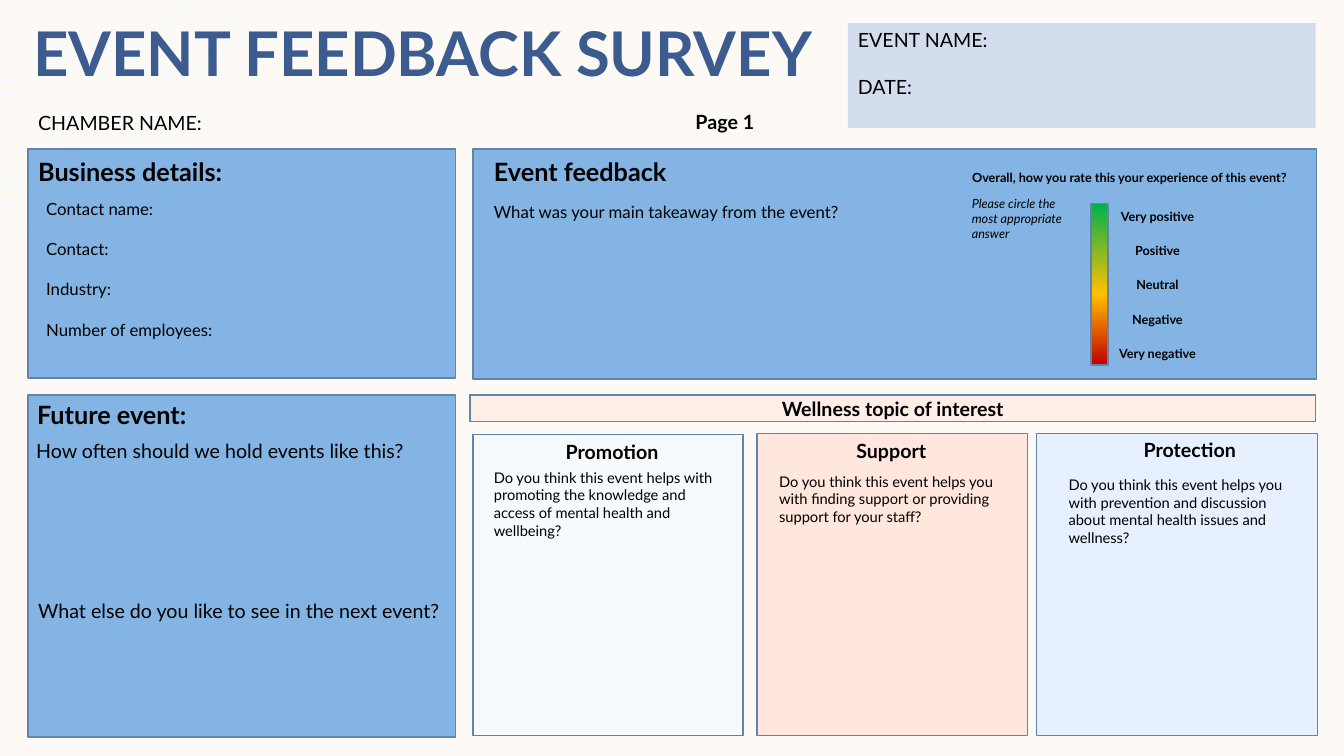
from copy import deepcopy
from math import asin, cos, pi, sin, tan

from lxml.etree import SubElement
from pptx import Presentation
from pptx.dml.color import RGBColor
from pptx.enum.shapes import MSO_SHAPE
from pptx.enum.text import MSO_ANCHOR, PP_ALIGN
from pptx.oxml.ns import qn
from pptx.util import Inches, Pt

PX = 9144
FONT = "Lato"
COLORS = {
    "paper": "FDFAF6",
    "ring": "F6FAFD",
    "title": "3C5C8F",
    "ink": "000000",
    "panel": "83B4E3",
    "outline": "6185A8",
    "event": "D4DDED",
    "banner": "FFEEE7",
    "promotion": "F6FAFD",
    "support": "FFE7DD",
    "protection": "E6F0FE",
    "good": "00B050",
    "neutral": "FFC000",
    "bad": "C00000",
}
RATINGS = ["Very positive", "Positive", "Neutral", "Negative", "Very negative"]
TOPICS = [
    ("Promotion", "promotion", (469, 431, 268, 299), (463, 432), (480, 460),
     "Do you think this event helps with promoting the knowledge and access "
     "of mental health and wellbeing?"),
    ("Support", "support", (751, 430, 268, 300), (740, 431), (763, 464),
     "Do you think this event helps you with finding support or providing "
     "support for your staff?"),
    ("Protection", "protection", (1028, 430, 279, 300), (1036, 430), (1050, 467),
     "Do you think this event helps you with prevention and discussion about "
     "mental health issues and wellness?"),
]


def rgb(name):
    return RGBColor.from_string(COLORS[name])


def emu(*lengths):
    return [round(length * PX) for length in lengths]


def write(frame, lines, size, color="ink", bold=False, italic=False,
          align=PP_ALIGN.LEFT, gap=0):
    frame.word_wrap = True
    for index, line in enumerate(lines):
        para = frame.paragraphs[0] if index == 0 else frame.add_paragraph()
        para.text = line
        para.alignment = align
        para.space_before = Pt(gap if index else 0)
        para.font.name = FONT
        para.font.size = Pt(size)
        para.font.bold = bold
        para.font.italic = italic
        para.font.color.rgb = rgb(color)


def add_text(page, place, lines, size, **style):
    box = page.shapes.add_textbox(*emu(*place))
    write(box.text_frame, lines, size, **style)


def add_panel(page, place, color, outlined=True):
    panel = page.shapes.add_shape(MSO_SHAPE.RECTANGLE, *emu(*place))
    panel.shadow.inherit = False
    panel.fill.solid()
    panel.fill.fore_color.rgb = rgb(color)
    if outlined:
        panel.line.color.rgb = rgb("outline")
        panel.line.width = Pt(1)
    else:
        panel.line.fill.background()
    return panel


def arc(radius, center_y):
    start = asin(-center_y / radius)
    reach = radius * 4 / 3 * tan((pi / 2 - start) / 4)
    x, y = radius * cos(start), center_y + radius * sin(start)
    bottom = center_y + radius
    return [tuple(emu(*point)) for point in (
        (x, y),
        (x - reach * sin(start), y + reach * cos(start)),
        (reach, bottom),
        (0, bottom),
    )]


def bend(outline):
    lines = []
    for step in list(outline):
        if step.tag == qn("a:lnTo"):
            lines.append(step)
        elif step.tag == qn("a:close"):
            for trio in (lines[:3], lines[4:]):
                curve = SubElement(outline, qn("a:cubicBezTo"))
                trio[0].addprevious(curve)
                for line in trio:
                    curve.append(line[0])
                    outline.remove(line)
            lines = []


def add_rings(page, center_y=-16, outer=246, pitch=13.4, thickness=2.5, count=17):
    builder = None
    for index in range(count):
        radius = outer - index * pitch
        points = arc(radius, center_y) + arc(radius - thickness, center_y)[::-1]
        if builder is None:
            builder = page.shapes.build_freeform(*points[0], scale=1.0)
        else:
            builder.move_to(*points[0])
        builder.add_line_segments(points[1:], close=True)
    rings = builder.convert_to_shape()
    rings.shadow.inherit = False
    rings.fill.solid()
    rings.fill.fore_color.rgb = rgb("ring")
    rings.line.fill.background()
    bend(rings._element.spPr.find(".//" + qn("a:path")))
    page.slide_layout.shapes._spTree.insert(2, rings._element)


def add_title(page):
    title = page.shapes.title
    title.left, title.top, title.width, title.height = emu(23, 9, 1167, 84)
    title.text_frame.vertical_anchor = MSO_ANCHOR.MIDDLE
    write(title.text_frame, ["EVENT FEEDBACK SURVEY"], 44, color="title", bold=True)


def add_header(page):
    event = add_panel(page, (841, 23, 464, 104), "event", outlined=False)
    event.text_frame.vertical_anchor = MSO_ANCHOR.TOP
    write(event.text_frame, ["EVENT NAME:", "DATE:"], 14, gap=16.8)
    add_text(page, (28, 105, 560, 34), ["CHAMBER NAME:"], 14)
    add_text(page, (680, 104, 80, 34), ["Page 1"], 14, bold=True)


def add_business(page):
    add_panel(page, (28, 148, 424, 227), "panel")
    add_text(page, (28, 150, 575, 40), ["Business details:"], 18, bold=True)
    add_text(page, (36, 192, 406, 151),
             ["Contact name:", "Contact:", "Industry:", "Number of employees:"],
             12, gap=14.4)


def add_future(page):
    add_panel(page, (28, 392, 424, 339), "panel")
    add_text(page, (27, 391, 347, 40), ["Future event:"], 18, bold=True)
    add_text(page, (26, 431, 425, 34), ["How often should we hold events like this?"], 14)
    add_text(page, (28, 589, 425, 34),
             ["What else do you like to see in the next event?"], 14)


def add_rating_scale(page):
    add_text(page, (953, 164, 334, 25),
             ["Overall, how you rate this your experience of this event?"], 9,
             bold=True, align=PP_ALIGN.CENTER)
    add_text(page, (954, 189, 119, 56),
             ["Please circle the most appropriate answer"], 9, italic=True)
    scale = add_panel(page, (1082, 202, 17, 160), "good")
    scale.fill.gradient()
    scale.fill.gradient_angle = 270
    stop_list = scale._element.spPr.find(".//" + qn("a:gsLst"))
    stop_list.append(deepcopy(stop_list[-1]))
    stops = [(0, "good"), (0.56, "neutral"), (1, "bad")]
    for stop, (position, color) in zip(scale.fill.gradient_stops, stops):
        stop.position = position
        stop.color.rgb = rgb(color)
    for index, rating in enumerate(RATINGS):
        add_text(page, (981, 202 + index * 34, 334, 25), [rating], 9,
                 bold=True, align=PP_ALIGN.CENTER)


def add_feedback(page):
    add_panel(page, (469, 148, 837, 228), "panel")
    add_text(page, (480, 150, 575, 40), ["Event feedback"], 18, bold=True)
    add_text(page, (480, 195, 555, 30),
             ["What was your main takeaway from the event?"], 12)
    add_rating_scale(page)


def add_topics(page):
    banner = add_panel(page, (466, 392, 839, 26), "banner")
    banner.text_frame.vertical_anchor = MSO_ANCHOR.MIDDLE
    write(banner.text_frame, ["Wellness topic of interest"], 14, bold=True,
          align=PP_ALIGN.CENTER)
    for heading, color, place, heading_at, question_at, question in TOPICS:
        add_panel(page, place, color)
        add_text(page, (*heading_at, 288, 34), [heading], 14, bold=True,
                 align=PP_ALIGN.CENTER)
        add_text(page, (*question_at, 243, 81), [question], 10.5)


def main():
    deck = Presentation()
    deck.slide_width, deck.slide_height = Inches(13.33), Inches(7.5)
    page = deck.slides.add_slide(deck.slide_layouts[5])
    page.background.fill.solid()
    page.background.fill.fore_color.rgb = rgb("paper")
    add_rings(page)
    add_title(page)
    add_header(page)
    add_business(page)
    add_feedback(page)
    add_future(page)
    add_topics(page)
    deck.save("out.pptx")


if __name__ == "__main__":
    main()
